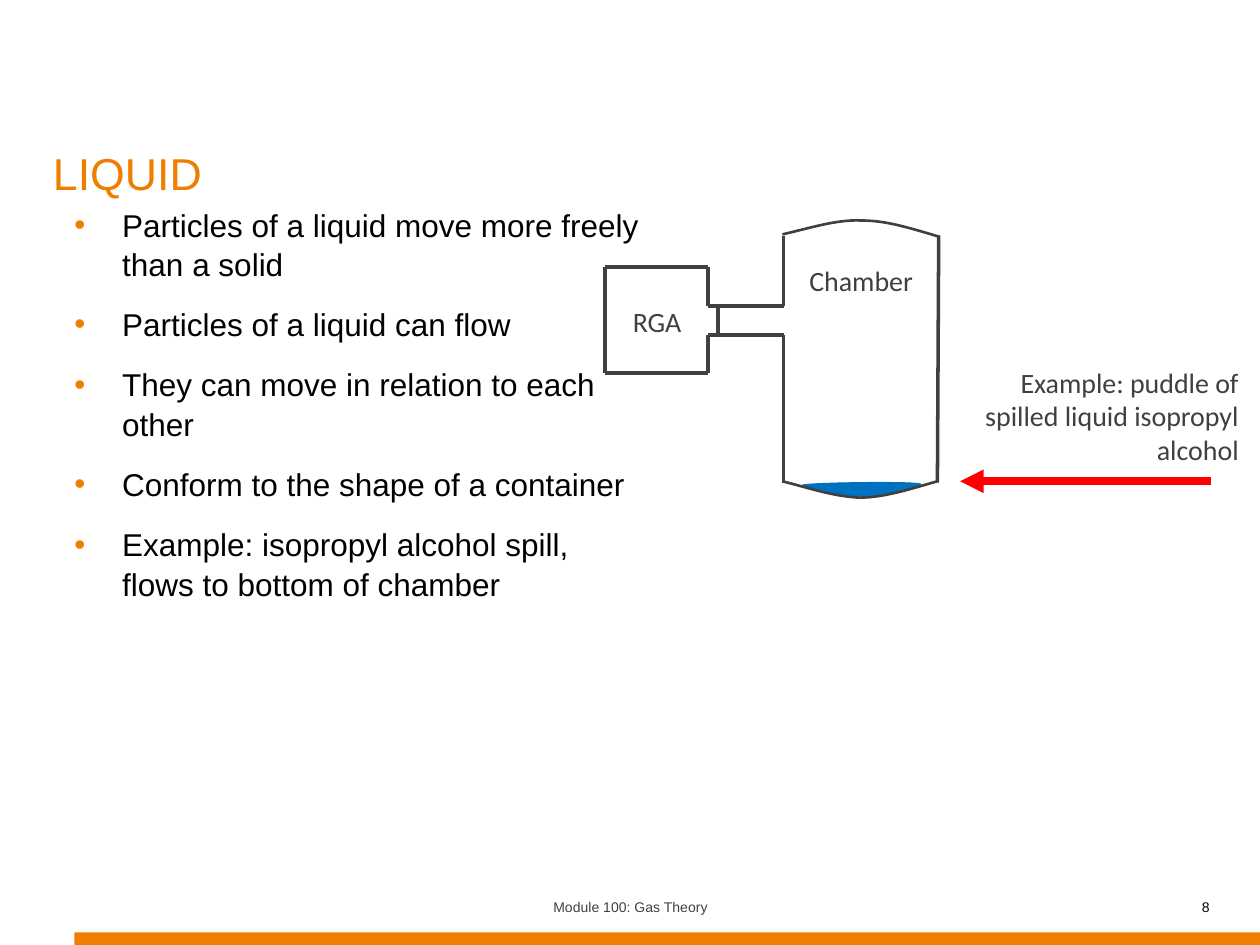
from lxml.etree import SubElement
from pptx import Presentation
from pptx.dml.color import RGBColor
from pptx.enum.shapes import MSO_CONNECTOR as Link, MSO_SHAPE as Form
from pptx.enum.text import MSO_ANCHOR as Anchor, MSO_AUTO_SIZE as Fit, PP_ALIGN as Align
from pptx.oxml.ns import qn
from pptx.util import Inches, Pt

ORANGE = RGBColor(0xEF, 0x7D, 0x00)
GRAY = RGBColor(0x40, 0x40, 0x40)
BLACK = RGBColor(0, 0, 0)
BLUE = RGBColor(0x00, 0x70, 0xC0)
RED = RGBColor(0xFF, 0, 0)
CELL = Inches(0.01)
POINTS = [
    "Particles of a liquid move more freely than a solid",
    "Particles of a liquid can flow",
    "They can move in relation to each other",
    "Conform to the shape of a container",
    "Example: isopropyl alcohol spill, flows to bottom of chamber",
]


def place(shape, box):
    shape.left, shape.top, shape.width, shape.height = [round(n * CELL) for n in box]


def style(font, face, size, color):
    font.name, font.size = face, Pt(size)
    font.color.rgb = color


def label(shapes, box, text, face, size, color, align, anchor=Anchor.TOP):
    shape = shapes.add_textbox(0, 0, 0, 0)
    place(shape, box)
    frame = shape.text_frame
    frame.word_wrap = True
    frame.vertical_anchor = anchor
    frame.text = text
    para = frame.paragraphs[0]
    para.alignment = align
    style(para.runs[0].font, face, size, color)
    return frame


def line(shapes, start, end, color=GRAY, width=2, arrow=False):
    ends = [round(n * CELL) for n in (*start, *end)]
    link = shapes.add_connector(Link.STRAIGHT, *ends)
    link.line.color.rgb = color
    link.line.width = Pt(width)
    props = link.element.spPr
    if arrow:
        SubElement(props.find(qn("a:ln")), qn("a:tailEnd"), type="triangle")
    SubElement(props, qn("a:effectLst"))


def curve(shapes, start, arcs, color, width, fill=None):
    dots, here = [], start
    for one, two, end in arcs:
        for step in range(1, 17):
            t = step / 16
            parts = ((1 - t) ** 3, 3 * t * (1 - t) ** 2, 3 * t * t * (1 - t), t ** 3)
            nodes = (here, one, two, end)
            dots.append(tuple(round(CELL * sum(k * n[i] for k, n in zip(parts, nodes)))
                              for i in (0, 1)))
        here = end
    pen = shapes.build_freeform(*[round(n * CELL) for n in start])
    pen.add_line_segments(dots, close=fill is not None)
    shape = pen.convert_to_shape()
    shape.shadow.inherit = False
    if fill is None:
        shape.fill.background()
    else:
        shape.fill.solid()
        shape.fill.fore_color.rgb = fill
    shape.line.color.rgb = color
    shape.line.width = Pt(width)


def head(shape, box):
    place(shape, box)
    frame = shape.text_frame
    frame.auto_size = Fit.NONE
    frame.vertical_anchor = Anchor.TOP
    frame.text = "\vLIQUID"
    para = frame.paragraphs[0]
    para.alignment = Align.LEFT
    font = para.runs[0].font
    style(font, "Arial", 44, ORANGE)
    para.runs[0].font._element.set("baseline", "30000")


def body(shape, box):
    place(shape, box)
    frame = shape.text_frame
    frame.auto_size = Fit.NONE
    frame.margin_left = frame.margin_right = 0
    frame.text = "\n".join(POINTS)
    for para in frame.paragraphs:
        props = para._p.get_or_add_pPr()
        props.set("marL", str(Inches(0.38)))
        props.set("indent", str(-Inches(0.38)))
        tint = SubElement(props, qn("a:buClr"))
        SubElement(tint, qn("a:srgbClr"), val=str(ORANGE))
        SubElement(props, qn("a:buFont"), typeface="Arial")
        SubElement(props, qn("a:buChar"), char="•")
        para.space_before, para.space_after = Pt(0), Pt(12)
        para.line_spacing = 1.04
        style(para.runs[0].font, "Arial", 18, BLACK)


def foot(shapes, box):
    x, y, w, h = box
    bar = shapes.add_shape(Form.RECTANGLE, 0, 0, 0, 0)
    place(bar, (x + 59, y + 40, w - 59, 10))
    bar.shadow.inherit = False
    bar.fill.solid()
    bar.fill.fore_color.rgb = ORANGE
    bar.line.fill.background()
    label(shapes, (x + 342, y, 317, 40), "Module 100: Gas Theory",
          "Arial", 8, GRAY, Align.CENTER, Anchor.MIDDLE)
    page = label(shapes, (x + 727, y, 233, 40), "8",
                 "Arial", 8, BLACK, Align.RIGHT, Anchor.MIDDLE)
    page.margin_left = page.margin_right = 0


def rga(shapes, box):
    x, y, w, h = box
    right, low = x + w, y + h
    for start, end in [((x, y), (x, low)), ((x, low), (right, low)),
                       ((x, y), (right, y)), ((right, y), (right, y + 31)),
                       ((right, low), (right, y + 54))]:
        line(shapes, start, end)
    label(shapes, (x + 2, y + 25, w - 3, 37), "RGA", "Calibri", 16, GRAY, Align.CENTER)


def pipe(shapes, box):
    x, y, w, h = box
    for level in (y, y + h):
        line(shapes, (x, level), (x + w, level))
    line(shapes, (x + 8, y), (x + 8, y + h))


def tank(shapes, box, gap):
    x, y, w, h = box
    right, low = x + w, y + h
    line(shapes, (x, y), (x, gap[0]))
    line(shapes, (x, gap[1]), (x, low))
    line(shapes, (right, y), (right - 1, low))
    label(shapes, (x, y + 17, w, 37), "Chamber", "Calibri", 16, GRAY, Align.CENTER)
    curve(shapes, (x + 108, low + 1),
          [((x + 116, low + 2), (x + 78, low + 11), (x + 63, low + 11)),
           ((x + 47, low + 11), (x + 7, low + 3), (x + 15, low + 2)),
           ((x + 22, low), (x + 100, low - 1), (x + 108, low + 1))], BLUE, 0.5, BLUE)
    curve(shapes, (x - 1, low - 1),
          [((x + 19, low + 4), (x + 39, low + 11), (x + 60, low + 12)),
           ((x + 80, low + 12), (x + 101, low + 5), (x + 122, low - 1))], GRAY, 1.5)
    curve(shapes, (right + 1, y + 1),
          [((x + 103, y - 5), (x + 83, y - 12), (x + 62, y - 12)),
           ((x + 42, y - 13), (x + 21, y - 6), (x - 1, y - 1))], GRAY, 1.5)


def note(shapes, box):
    x, y, w, h = box
    label(shapes, box, "Example: puddle of spilled liquid isopropyl alcohol",
          "Calibri", 16, GRAY, Align.RIGHT)
    line(shapes, (x + 215, y + 97), (x + 16, y + 97), RED, 4.5, True)


def main():
    deck = Presentation()
    deck.slide_width, deck.slide_height = 1000 * CELL, 750 * CELL
    slide = deck.slides.add_slide(deck.slide_layouts[1])
    shapes = slide.shapes
    foot(shapes, (0, 700, 1000, 50))
    body(slide.placeholders[1], (59, 157, 450, 480))
    head(shapes.title, (32, 30, 900, 125))
    parts = shapes.add_group_shape().shapes
    pipe(parts, (562, 243, 60, 23))
    rga(parts, (480, 212, 82, 84))
    tank(parts, (622, 187, 123, 196), (243, 266))
    note(parts, (746, 285, 247, 62))
    deck.save("out.pptx")


if __name__ == "__main__":
    main()
